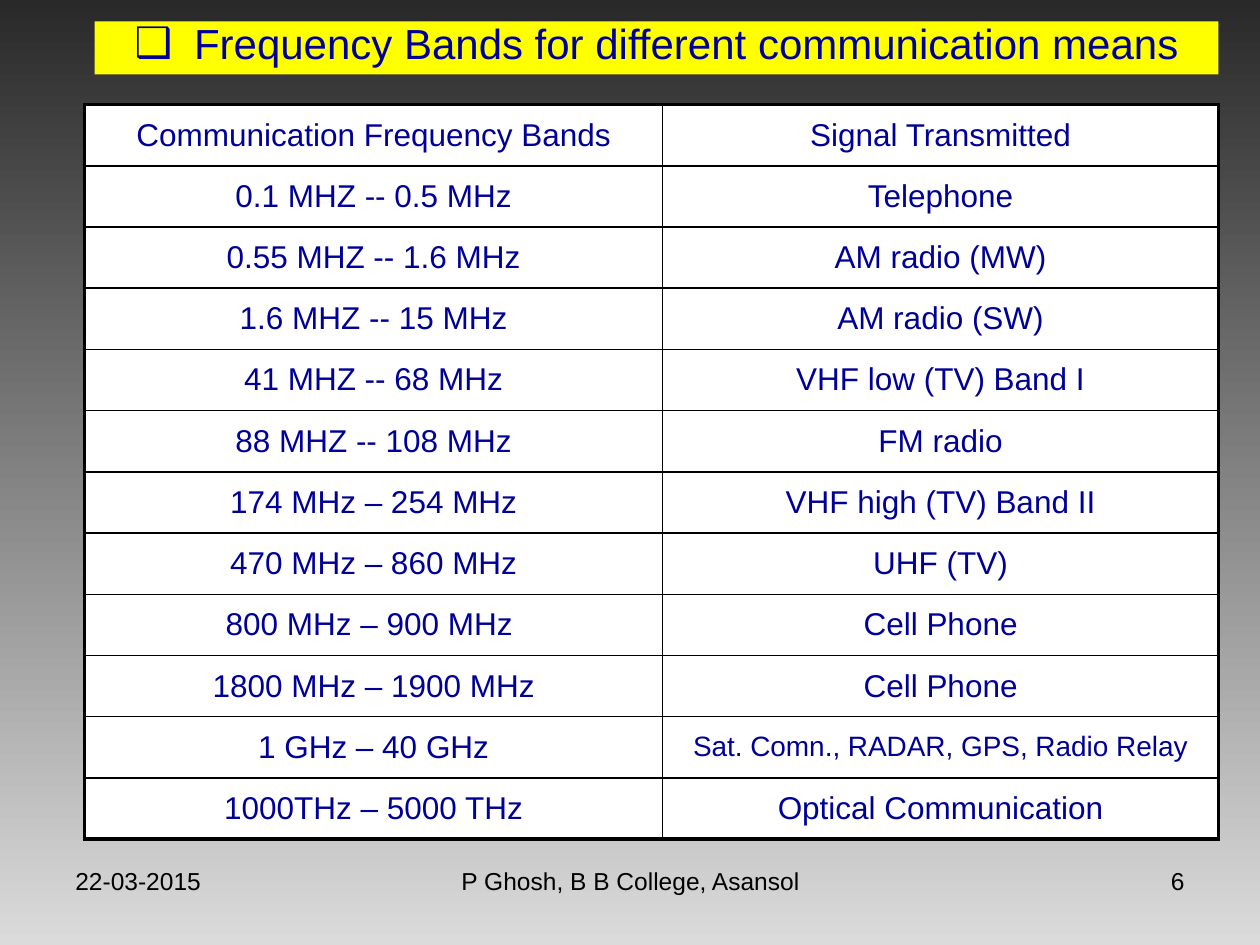
from dataclasses import dataclass

from lxml import etree
from pptx import Presentation
from pptx.dml.color import RGBColor
from pptx.enum.shapes import MSO_SHAPE
from pptx.enum.text import MSO_ANCHOR, PP_ALIGN
from pptx.oxml.ns import qn
from pptx.util import Inches, Pt

LEFT, MID, RIGHT = PP_ALIGN.LEFT, PP_ALIGN.CENTER, PP_ALIGN.RIGHT
TOP, CENTER = MSO_ANCHOR.TOP, MSO_ANCHOR.MIDDLE
RECT = MSO_SHAPE.RECTANGLE
WIDE, HIGH = 10, 7.5


@dataclass(frozen=True)
class Theme:
    font: str = "Arial"
    ink: str = "000099"
    black: str = "000000"
    paper: str = "FFFFFF"
    bar: str = "FFFF00"
    dark: str = "292929"
    light: str = "DBDBDB"
    title: int = 24
    body: int = 18
    small: int = 16
    foot: int = 14
    thick: float = 2.25
    thin: float = 1


THEME = Theme()

ROWS = [
    ("Communication Frequency Bands", "Signal Transmitted"),
    ("0.1 MHZ -- 0.5 MHz", "Telephone"),
    ("0.55 MHZ -- 1.6 MHz", "AM radio (MW)"),
    ("1.6 MHZ -- 15 MHz", "AM radio (SW)"),
    ("41 MHZ -- 68 MHz", "VHF low (TV) Band I"),
    ("88 MHZ -- 108 MHz", "FM radio"),
    ("174 MHz – 254 MHz", "VHF high (TV) Band II"),
    ("470 MHz – 860 MHz", "UHF (TV)"),
    ("800 MHz – 900 MHz ", "Cell Phone"),
    ("1800 MHz – 1900 MHz", "Cell Phone"),
    ("1 GHz – 40 GHz", "Sat. Comn., RADAR, GPS, Radio Relay"),
    ("1000THz – 5000 THz", "Optical Communication"),
]
LONG = 30  # longer cell text takes the small size


def rgb(code):
    return RGBColor.from_string(code)


def sub(node, tag, **attrs):
    return etree.SubElement(node, qn(tag), attrs)


def write(frame, text, size=THEME.body, color=THEME.ink, align=MID,
          lines=None, before=None, mark=None):
    """Fill a text frame; before is a share of the line, mark a bullet."""
    para = frame.paragraphs[0]
    para.alignment = align
    if lines:
        para.line_spacing = lines
    props = para._p.get_or_add_pPr()
    if before:
        sub(sub(props, "a:spcBef"), "a:spcPct", val=str(round(before * 100000)))
    if mark:
        hang = Inches(0.38)
        props.set("marL", str(hang))
        props.set("indent", str(-hang))
        sub(sub(props, "a:buClr"), "a:srgbClr", val=color)
        sub(props, "a:buFont", typeface=THEME.font)
        sub(props, "a:buChar", char=mark)
    run = para.add_run()
    run.text = text
    run.font.name = THEME.font
    run.font.size = Pt(size)
    run.font.color.rgb = rgb(color)


def backdrop(slide):
    fill = slide.background.fill
    fill.gradient()
    fill.gradient_angle = 270
    for stop, code in zip(fill.gradient_stops, (THEME.dark, THEME.light)):
        stop.color.rgb = rgb(code)


def banner(slide, text):
    bar = slide.shapes.add_shape(RECT, Inches(0.75), Inches(0.17),
                                 Inches(8.92), Inches(0.42))
    bar.shadow.inherit = False
    bar.fill.solid()
    bar.fill.fore_color.rgb = rgb(THEME.bar)
    bar.line.fill.background()
    bar.text_frame.word_wrap = True
    bar.text_frame.vertical_anchor = TOP
    write(bar.text_frame, text, size=THEME.title, lines=0.8, before=0.2, mark="❑")


def edge(cell, side, width):
    line = sub(cell._tc.get_or_add_tcPr(), f"a:ln{side}", w=str(Pt(width)))
    sub(sub(line, "a:solidFill"), "a:srgbClr", val=THEME.black)


def grid(slide, rows):
    tall, across = 5.83, 9
    table = slide.shapes.add_table(len(rows), 2, Inches(0.67), Inches(0.83),
                                   Inches(across), Inches(tall)).table
    for col, share in zip(table.columns, (0.51, 0.49)):
        col.width = Inches(across * share)
    for row in table.rows:
        row.height = Inches(tall / len(rows))
    last = len(rows) - 1
    for r, texts in enumerate(rows):
        for c, text in enumerate(texts):
            cell = table.cell(r, c)
            outer = {"L": c == 0, "R": c == 1, "T": r == 0, "B": r == last}
            for side, thick in outer.items():
                edge(cell, side, THEME.thick if thick else THEME.thin)
            cell.fill.solid()
            cell.fill.fore_color.rgb = rgb(THEME.paper)
            cell.vertical_anchor = CENTER
            size = THEME.small if len(text) > LONG else THEME.body
            write(cell.text_frame, text, size=size, before=0.2)


def footer(slide, left, width, text, align):
    box = slide.shapes.add_textbox(Inches(left), Inches(HIGH * 0.91),
                                   Inches(width), Inches(0.52))
    box.text_frame.word_wrap = True
    write(box.text_frame, text, size=THEME.foot, color=THEME.black, align=align)


def main():
    deck = Presentation()
    deck.slide_width, deck.slide_height = Inches(WIDE), Inches(HIGH)
    slide = deck.slides.add_slide(deck.slide_layouts[6])
    backdrop(slide)

    # Footer: date, author, page
    footer(slide, 0.5, 2.33, "22-03-2015", LEFT)
    footer(slide, 3.42, 3.17, "P Ghosh, B B College, Asansol", MID)
    footer(slide, 7.17, 2.33, "6", RIGHT)

    # Title bar and table of bands
    banner(slide, " Frequency Bands for different communication means")
    grid(slide, ROWS)
    deck.save("out.pptx")


if __name__ == "__main__":
    main()
